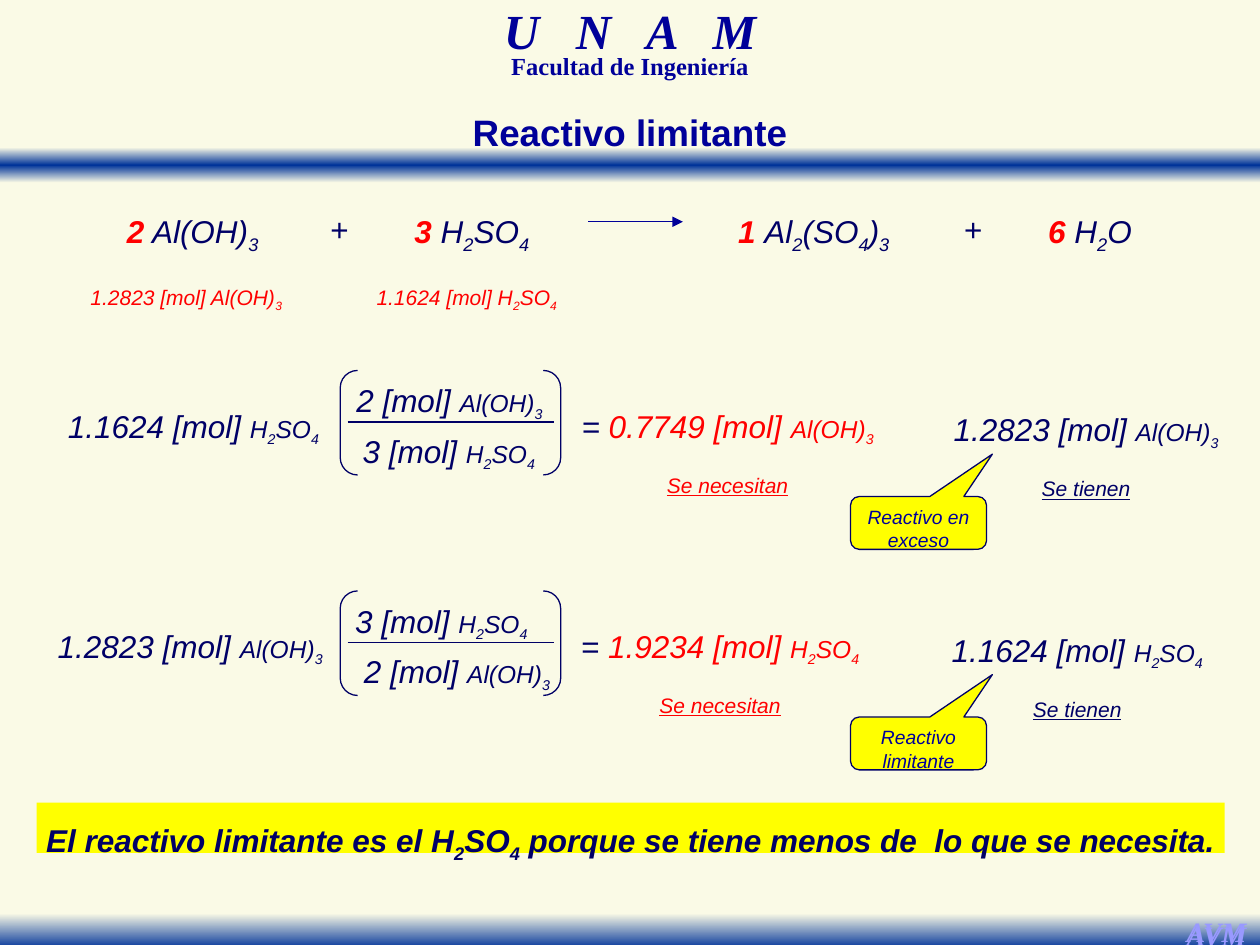
from itertools import groupby

from lxml.etree import SubElement
from pptx import Presentation
from pptx.dml.color import RGBColor
from pptx.enum.shapes import MSO_CONNECTOR, MSO_SHAPE
from pptx.enum.text import MSO_ANCHOR, MSO_AUTO_SIZE, PP_ALIGN
from pptx.oxml.ns import qn
from pptx.util import Inches, Pt

COLORS = {
    "cream": "FAFAE6",
    "band": "003399",
    "heading": "000099",
    "ink": "000066",
    "red": "FF0000",
    "yellow": "FFFF00",
    "initials": "9999FF",
}
HYDROXIDE = "Al(OH)3"
ACID = "H2SO4"


def color(name):
    return RGBColor.from_string(COLORS[name])


def add_run(paragraph, text, size, ink="ink", bold=False, italic=True,
            underline=False, subscript=False, font="Arial"):
    run = paragraph.add_run()
    run.text = text
    run.font.name = font
    run.font.size = Pt(size)
    run.font.color.rgb = color(ink)
    run.font.bold = bold
    run.font.italic = italic
    if underline:
        run.font.underline = True
    if subscript:
        run.font._element.set("baseline", "-25000")


def add_formula(paragraph, formula, size, ink="ink", bold=False):
    for is_index, letters in groupby(formula, str.isdigit):
        add_run(paragraph, "".join(letters), size, ink, bold, subscript=is_index)


def add_text_box(slide, left, top, width, height, alignment=PP_ALIGN.JUSTIFY,
                 line_spacing=1.4, wrap=False):
    box = slide.shapes.add_textbox(Inches(left), Inches(top), Inches(width), Inches(height))
    frame = box.text_frame
    frame.word_wrap = wrap
    frame.auto_size = MSO_AUTO_SIZE.SHAPE_TO_FIT_TEXT
    paragraph = frame.paragraphs[0]
    paragraph.alignment = alignment
    paragraph.line_spacing = line_spacing
    return paragraph, frame


def add_shape(slide, kind, left, top, width, height, fill=None, line=None):
    shape = slide.shapes.add_shape(kind, Inches(left), Inches(top), Inches(width), Inches(height))
    shape.shadow.inherit = False
    if fill:
        shape.fill.solid()
        shape.fill.fore_color.rgb = color(fill)
    else:
        shape.fill.background()
    if line:
        shape.line.color.rgb = color(line)
        shape.line.width = Pt(0.75)
    else:
        shape.line.fill.background()
    return shape


def add_band(slide, top, stops):
    band = add_shape(slide, MSO_SHAPE.RECTANGLE, 0, top, 10, 0.28)
    band.fill.gradient()
    band.fill.gradient_angle = 270
    stop_list = band._element.spPr.find(qn("a:gradFill")).find(qn("a:gsLst"))
    for old_stop in list(stop_list):
        stop_list.remove(old_stop)
    for position, name in stops:
        stop = SubElement(stop_list, qn("a:gs"), pos=str(position * 1000))
        SubElement(stop, qn("a:srgbClr"), val=COLORS[name])


def add_line(slide, left, right, y, ink, arrow=False):
    line = slide.shapes.add_connector(
        MSO_CONNECTOR.STRAIGHT, Inches(left), Inches(y), Inches(right), Inches(y))
    line.line.color.rgb = color(ink)
    line.line.width = Pt(0.75)
    if arrow:
        SubElement(line.line._get_or_add_ln(), qn("a:tailEnd"), type="triangle")
    SubElement(line._element.spPr, qn("a:effectLst"))


def add_heading(slide):
    add_band(slide, 1.17, [(0, "cream"), (50, "band"), (100, "cream")])
    add_band(slide, 7.25, [(0, "cream"), (100, "band")])
    for text, size, italic, place in (
        ("U   N   A   M", 28, True, (3.04, 0.08, 3.92, 0.43)),
        ("Facultad de Ingeniería", 14, False, (3.21, 0.42, 3.58, 0.26)),
    ):
        paragraph, _ = add_text_box(slide, *place, PP_ALIGN.CENTER, 0.7, wrap=True)
        add_run(paragraph, text, size, "heading", True, italic, font="Times New Roman")
    for top in (7.21, 7.24):
        paragraph, _ = add_text_box(slide, 9.31, top, 0.69, 0.37, PP_ALIGN.CENTER, 1.0)
        add_run(paragraph, "AVM", 16, "initials", True, font="Times New Roman")


def add_title(slide, text):
    title = slide.shapes.title
    title.left, title.top = Inches(3.64), Inches(0.82)
    title.width, title.height = Inches(2.72), Inches(0.45)
    frame = title.text_frame
    frame.word_wrap = False
    frame.auto_size = MSO_AUTO_SIZE.NONE
    frame.vertical_anchor = MSO_ANCHOR.TOP
    paragraph = frame.paragraphs[0]
    paragraph.alignment = PP_ALIGN.CENTER
    add_run(paragraph, text, 21, "heading", True, italic=False)
    slide.shapes._spTree.append(title._element)


def add_reaction(slide):
    for coefficient, gap, formula, left, width in (
        ("2", " ", HYDROXIDE, 0.91, 1.27),
        ("3 ", "", ACID, 3.19, 1.15),
        ("1 ", "", "Al2(SO4)3", 5.76, 1.44),
        ("6 ", "", "H2O", 8.22, 0.88),
    ):
        paragraph, _ = add_text_box(slide, left, 1.5, width, 0.48)
        add_run(paragraph, coefficient, 18, "red", True)
        add_formula(paragraph, gap + formula, 18)
    for left in (2.52, 7.55):
        paragraph, _ = add_text_box(slide, left, 1.5, 0.35, 0.52)
        add_run(paragraph, "+", 18)
    add_line(slide, 4.67, 5.42, 1.76, "heading", arrow=True)
    for amount, formula, left, width in (
        ("1.2823", HYDROXIDE, 0.62, 1.8),
        ("1.1624", ACID, 2.89, 1.7),
    ):
        paragraph, _ = add_text_box(slide, left, 2.21, width, 0.3, line_spacing=1.0)
        add_run(paragraph, f"{amount} [mol] ", 12, "red")
        add_formula(paragraph, formula, 12, "red")


def add_amount(paragraph, amount, formula, ink="ink"):
    add_run(paragraph, f"{amount} [mol] ", 18, ink)
    add_formula(paragraph, formula, 14, ink)


def add_result(slide, place, prefix, amount, formula, caption, ink):
    paragraph, frame = add_text_box(slide, *place, PP_ALIGN.CENTER)
    paragraph.space_after = Pt(8.5)
    if prefix:
        add_run(paragraph, prefix, 18)
    add_amount(paragraph, amount, formula, ink)
    note = frame.add_paragraph()
    note.alignment = PP_ALIGN.CENTER
    note.line_spacing = 1.4
    add_run(note, caption, 12, ink, underline=True)


def add_callout(slide, top, text):
    callout = add_shape(slide, MSO_SHAPE.ROUNDED_RECTANGULAR_CALLOUT,
                        6.75, top, 1.08, 0.42, "yellow", "ink")
    for index, value in enumerate((0.543, -1.3, 0.167)):
        callout.adjustments[index] = value
    frame = callout.text_frame
    frame.word_wrap = True
    frame.vertical_anchor = MSO_ANCHOR.TOP
    paragraph = frame.paragraphs[0]
    paragraph.alignment = PP_ALIGN.CENTER
    add_run(paragraph, text, 11, "heading")


def add_calculation(slide, top, given, ratio, needed, available, verdict):
    for (amount, formula, left, width), offset in zip((given, *ratio), (0, -0.2, 0.2)):
        paragraph, _ = add_text_box(slide, left, top + offset, width, 0.48)
        add_amount(paragraph, amount, formula)
    add_line(slide, 2.76, 4.4, top + 0.3, "ink")
    add_shape(slide, MSO_SHAPE.DOUBLE_BRACKET, 2.7, top - 0.11, 1.75, 0.83, line="ink")
    for (amount, formula, left, width), offset, prefix, caption, ink in (
        (needed, 0, "= ", "Se necesitan", "red"),
        (available, 0.03, "", "Se tienen", "ink"),
    ):
        add_result(slide, (left, top + offset, width, 0.92), prefix, amount, formula, caption, ink)
    add_callout(slide, top + 0.89, verdict)


def add_conclusion(slide):
    banner = add_shape(slide, MSO_SHAPE.RECTANGLE, 0.29, 6.37, 9.43, 0.4, "yellow")
    frame = banner.text_frame
    frame.word_wrap = False
    frame.vertical_anchor = MSO_ANCHOR.TOP
    frame.margin_left = frame.margin_right = Inches(0.02)
    frame.margin_top = frame.margin_bottom = Inches(0.01)
    paragraph = frame.paragraphs[0]
    paragraph.alignment = PP_ALIGN.CENTER
    paragraph.line_spacing = 1.4
    add_formula(paragraph, "El reactivo limitante es el H2SO4 porque se tiene menos de  lo que se necesita.",
                18, bold=True)


def main():
    presentation = Presentation()
    presentation.slide_width, presentation.slide_height = Inches(10), Inches(7.5)
    slide = presentation.slides.add_slide(presentation.slide_layouts[5])
    slide.background.fill.solid()
    slide.background.fill.fore_color.rgb = color("cream")
    add_heading(slide)
    add_reaction(slide)
    add_calculation(slide, 3.05, ("1.1624", ACID, 0.44, 2.23),
                    (("2", HYDROXIDE, 2.73, 1.7), ("3", ACID, 2.78, 1.6)),
                    ("0.7749", HYDROXIDE, 4.47, 2.61), ("1.2823", HYDROXIDE, 7.42, 2.4),
                    "Reactivo en exceso")
    add_calculation(slide, 4.8, ("1.2823", HYDROXIDE, 0.36, 2.33),
                    (("3", ACID, 2.72, 1.6), ("2", HYDROXIDE, 2.79, 1.7)),
                    ("1.9234", ACID, 4.47, 2.49), ("1.1624", ACID, 7.41, 2.28),
                    "Reactivo limitante")
    add_conclusion(slide)
    add_title(slide, "Reactivo limitante")
    presentation.save("out.pptx")


if __name__ == "__main__":
    main()
